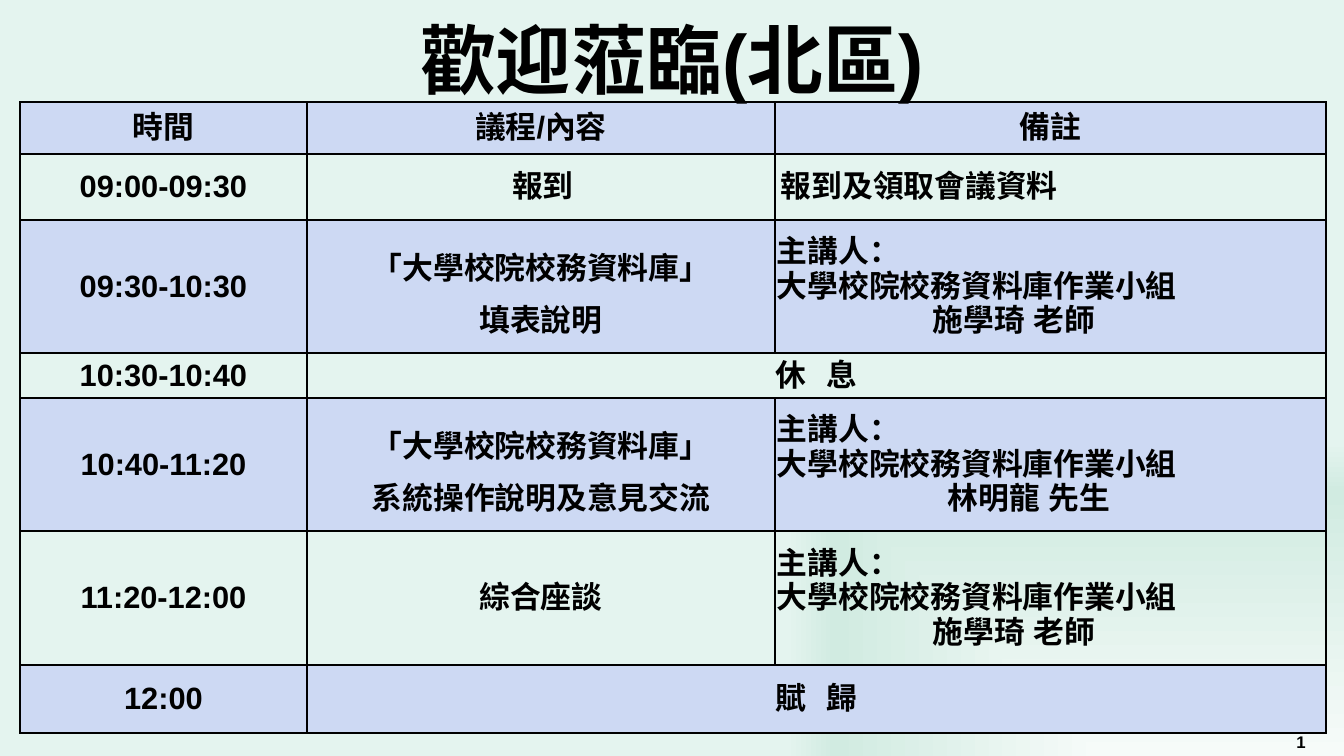
from dataclasses import dataclass

from pptx import Presentation
from pptx.dml.color import RGBColor
from pptx.enum.text import MSO_ANCHOR, MSO_AUTO_SIZE, PP_ALIGN
from pptx.oxml import parse_xml
from pptx.oxml.ns import nsdecls, qn
from pptx.slide import Slide
from pptx.table import _Cell
from pptx.text.text import TextFrame

PX = 12192000 // 1344 + 3 / 7
FONT = "Arial"
BLACK = RGBColor(0x00, 0x00, 0x00)
BAND = RGBColor(0xCD, 0xD9, 0xF3)
MINT_LIGHT = RGBColor(0xF6, 0xFB, 0xF9)
MINT_DARK = RGBColor(0xD1, 0xEB, 0xE1)
MINT = RGBColor(0xE4, 0xF4, 0xEF)
BACKDROP_STOPS = ((0, MINT_LIGHT), (70, MINT_DARK), (83, MINT), (100, MINT))
COLUMN_WIDTHS = (287, 468, 551)


def px(length: int) -> int:
    return round(length * PX)


@dataclass(frozen=True)
class Line:
    text: str
    align: PP_ALIGN = PP_ALIGN.CENTER
    spacing: float = 1.0
    indent: int = 0
    tracking: int = 0


@dataclass(frozen=True)
class Session:
    height: int
    time: str
    topic: tuple[Line, ...]
    remark: tuple[Line, ...] = ()


def left(text: str, indent: int = 0) -> Line:
    return Line(text, align=PP_ALIGN.LEFT, indent=indent)


def speaker(name: str, indent: int) -> tuple[Line, ...]:
    return left("主講人："), left("大學校院校務資料庫作業小組"), left(name, indent)


def database_topic(subject: str) -> tuple[Line, ...]:
    return Line("「大學校院校務資料庫」", spacing=1.5), Line(subject, spacing=1.5)


AGENDA = (
    Session(52, "時間", (Line("議程/內容"),), (Line("備註"),)),
    Session(66, "09:00-09:30", (Line("報到", indent=4),), (left("報到及領取會議資料", 4),)),
    Session(133, "09:30-10:30", database_topic("填表說明"), speaker("施學琦 老師", 156)),
    Session(45, "10:30-10:40", (Line("休 息", tracking=400),)),
    Session(133, "10:40-11:20", database_topic("系統操作說明及意見交流"), speaker("林明龍 先生", 171)),
    Session(134, "11:20-12:00", (Line("綜合座談"),), speaker("施學琦 老師", 156)),
    Session(68, "12:00", (Line("賦 歸", tracking=400),)),
)


def write(frame: TextFrame, *lines: Line, size: int) -> None:
    for index, line in enumerate(lines):
        paragraph = frame.add_paragraph() if index else frame.paragraphs[0]
        paragraph.alignment = line.align
        paragraph.line_spacing = line.spacing
        if line.indent:
            properties = paragraph._p.get_or_add_pPr()
            properties.set("marL", str(px(line.indent)))
            properties.set("indent", "0")
        run = paragraph.add_run()
        run.text = line.text
        run.font.name = FONT
        run.font.size = size * 12700
        run.font.bold = True
        run.font.color.rgb = BLACK
        run_properties = run._r.get_or_add_rPr()
        run_properties.append(parse_xml(f'<a:ea {nsdecls("a")} typeface="{FONT}"/>'))
        if line.tracking:
            run_properties.set("spc", str(line.tracking))


def paint_backdrop(slide: Slide) -> None:
    stops = "".join(
        f'<a:gs pos="{position * 1000}"><a:srgbClr val="{color}"/></a:gs>'
        for position, color in BACKDROP_STOPS
    )
    slide.element.find(qn("p:cSld")).insert(0, parse_xml(
        f'<p:bg {nsdecls("p", "a")}><p:bgPr><a:gradFill rotWithShape="1">'
        f'<a:gsLst>{stops}</a:gsLst><a:path path="rect">'
        '<a:fillToRect l="100000" t="100000"/></a:path></a:gradFill>'
        "<a:effectLst/></p:bgPr></p:bg>"
    ))


def format_cell(cell: _Cell, banded: bool) -> None:
    cell.vertical_anchor = MSO_ANCHOR.MIDDLE
    cell.margin_left = cell.margin_right = px(2)
    cell.margin_top = cell.margin_bottom = 0
    properties = cell._tc.get_or_add_tcPr()
    for side in "LRTB":
        properties.append(parse_xml(
            f'<a:ln{side} {nsdecls("a")} w="19050"><a:solidFill>'
            f'<a:srgbClr val="{BLACK}"/></a:solidFill></a:ln{side}>'
        ))
    if banded:
        cell.fill.solid()
        cell.fill.fore_color.rgb = BAND
    else:
        cell.fill.background()


def add_agenda(slide: Slide) -> None:
    agenda = slide.shapes.add_table(
        len(AGENDA), len(COLUMN_WIDTHS), px(20), px(102),
        px(sum(COLUMN_WIDTHS)), px(sum(session.height for session in AGENDA)),
    ).table
    agenda.first_row = agenda.horz_banding = False
    for column, width in zip(agenda.columns, COLUMN_WIDTHS):
        column.width = px(width)
    for index, session in enumerate(AGENDA):
        row = agenda.rows[index]
        row.height = px(session.height)
        for cell in row.cells:
            format_cell(cell, banded=index % 2 == 0)
        if not session.remark:
            agenda.cell(index, 1).merge(agenda.cell(index, 2))
        for cell, lines in zip(row.cells, ((Line(session.time),), session.topic, session.remark)):
            write(cell.text_frame, *lines, size=22)


def add_title(slide: Slide) -> None:
    welcome = slide.shapes.title
    welcome.left, welcome.top, welcome.width, welcome.height = map(px, (168, 2, 1008, 67))
    frame = welcome.text_frame
    frame.word_wrap = True
    frame.auto_size = MSO_AUTO_SIZE.NONE
    frame.vertical_anchor = MSO_ANCHOR.MIDDLE
    write(frame, Line("歡迎蒞臨(北區)", spacing=1.5), size=54)
    slide.shapes.element.append(welcome.element)


def add_page_number(slide: Slide) -> None:
    page_number = slide.shapes.add_textbox(*map(px, (1258, 728, 86, 28)))
    frame = page_number.text_frame
    frame.word_wrap = True
    frame.vertical_anchor = MSO_ANCHOR.MIDDLE
    write(frame, Line("1"), size=12)
    field = frame.paragraphs[0].runs[0]._r
    field.tag = qn("a:fld")
    field.set("id", "{B6F15528-21DE-4FAA-801E-634DDDAF4B2B}")
    field.set("type", "slidenum")


def main() -> None:
    presentation = Presentation()
    presentation.slide_width = px(1344)
    presentation.slide_height = px(756)
    slide = presentation.slides.add_slide(presentation.slide_layouts[5])
    paint_backdrop(slide)
    add_page_number(slide)
    add_agenda(slide)
    add_title(slide)
    presentation.save("out.pptx")


if __name__ == "__main__":
    main()
